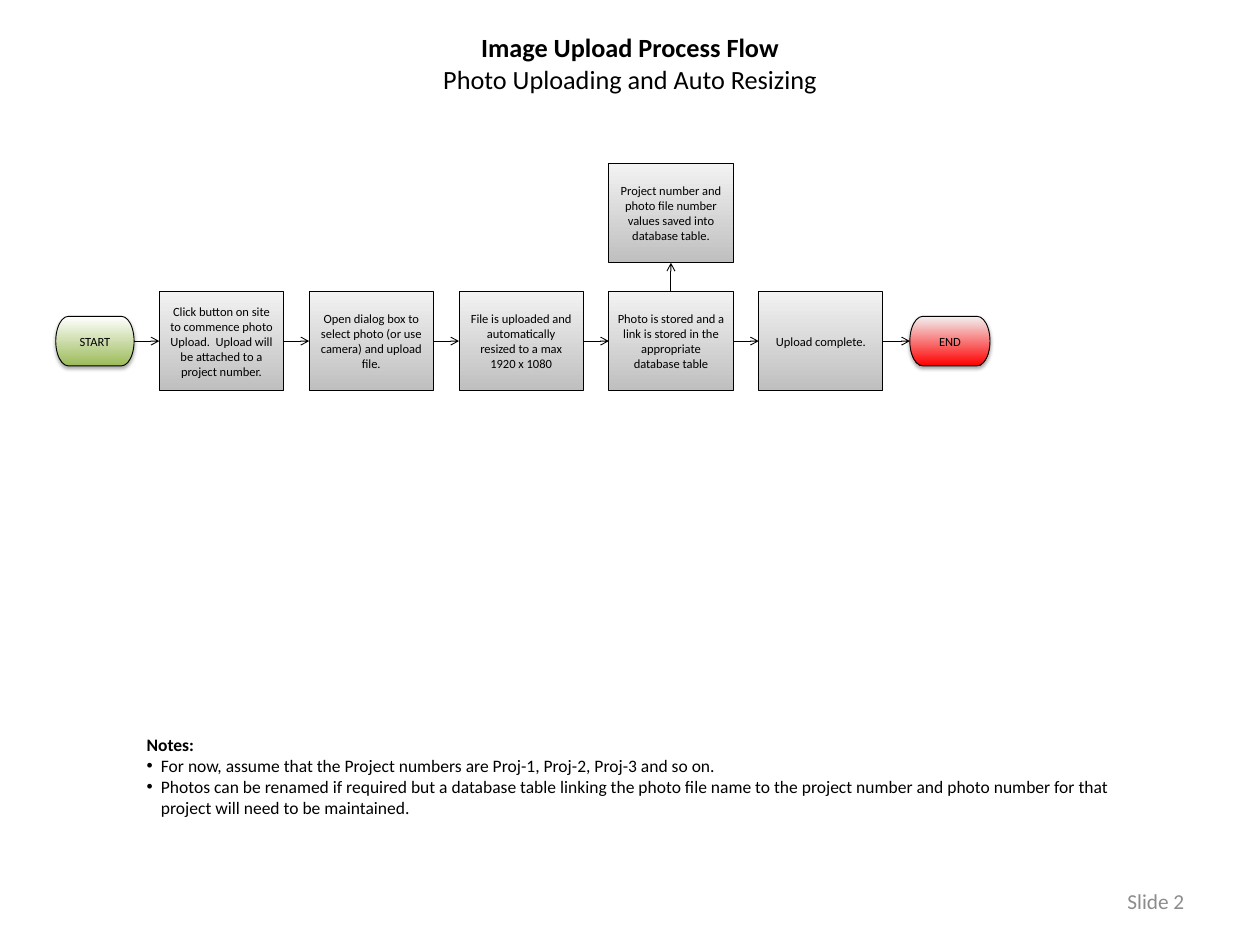
import lxml.etree
import pptx
import pptx.dml.color
import pptx.enum.shapes
import pptx.enum.text
import pptx.oxml
import pptx.oxml.ns
import pptx.util

Inches = pptx.util.Inches
Pt = pptx.util.Pt
RGBColor = pptx.dml.color.RGBColor
Align = pptx.enum.text.PP_ALIGN
Anchor = pptx.enum.text.MSO_ANCHOR
Shape = pptx.enum.shapes.MSO_SHAPE
qn = pptx.oxml.ns.qn

BLACK = RGBColor(0x00, 0x00, 0x00)
WHITE = RGBColor(0xFF, 0xFF, 0xFF)
PALE_GRAY = RGBColor(0xF2, 0xF2, 0xF2)
MID_GRAY = RGBColor(0xBF, 0xBF, 0xBF)
NUMBER_GRAY = RGBColor(0x8C, 0x8C, 0x8C)
GREEN = RGBColor(0x9B, 0xBB, 0x59)
RED = RGBColor(0xFF, 0x00, 0x00)
FONT = "Calibri"

TOP, LEFT, BOTTOM, RIGHT = range(4)

STEPS = [
    "Click button on site to commence photo Upload.  Upload will be attached to a project number.",
    "Open dialog box to select photo (or use camera) and upload file.",
    "File is uploaded and automatically resized to a max 1920 x 1080",
    "Photo is stored and a link is stored in the appropriate database table",
    "Upload complete.",
]
STORAGE_STEP = 3
STORAGE = "Project number and photo file number values saved into database table."
NOTES = [
    "For now, assume that the Project numbers are Proj-1, Proj-2, Proj-3 and so on.",
    "Photos can be renamed if required but a database table linking the photo file name "
    "to the project number and photo number for that project will need to be maintained.",
]
SHADOW = (
    '<a:outerShdw xmlns:a="http://schemas.openxmlformats.org/drawingml/2006/main" '
    'blurRad="40000" dist="23000" dir="5400000" rotWithShape="0">'
    '<a:srgbClr val="000000"><a:alpha val="35000"/></a:srgbClr></a:outerShdw>'
)


def write(paragraph, wording, size, align, bold=False, color=BLACK):
    """Add one formatted run to a paragraph."""
    paragraph.alignment = align
    run = paragraph.add_run()
    run.text = wording
    run.font.name = FONT
    run.font.size = Pt(size)
    run.font.bold = bold
    run.font.color.rgb = color


def set_frame(frame, anchor, inset_x=0.1, inset_y=0.05):
    """Wrap a text frame and set its anchor and insets."""
    frame.word_wrap = True
    frame.auto_size = pptx.enum.text.MSO_AUTO_SIZE.NONE
    frame.vertical_anchor = anchor
    frame.margin_left = frame.margin_right = Inches(inset_x)
    frame.margin_top = frame.margin_bottom = Inches(inset_y)


def add_node(slide, kind, box, wording, upper, lower):
    """Draw a flowchart node shaded from its upper to its lower colour."""
    node = slide.shapes.add_shape(kind, *box)
    node.shadow.inherit = False
    node.fill.gradient()
    node.fill.gradient_angle = 270
    for stop, color in zip(node.fill.gradient_stops, (upper, lower)):
        stop.color.rgb = color
    node.line.color.rgb = BLACK
    node.line.width = Pt(0.75)
    set_frame(node.text_frame, Anchor.MIDDLE)
    write(node.text_frame.paragraphs[0], wording, 10, Align.CENTER)
    return node


def add_terminator(slide, box, wording, upper, lower):
    """Draw a start or end node with a soft shadow."""
    terminator = add_node(slide, Shape.FLOWCHART_TERMINATOR, box, wording, upper, lower)
    effects = terminator._element.spPr.find(qn("a:effectLst"))
    effects.append(pptx.oxml.parse_xml(SHADOW))
    return terminator


def add_arrow(slide, source, source_side, target, target_side):
    """Join two nodes with an open-headed arrow."""
    arrow = slide.shapes.add_connector(pptx.enum.shapes.MSO_CONNECTOR.STRAIGHT, 0, 0, 0, 0)
    arrow.begin_connect(source, source_side)
    arrow.end_connect(target, target_side)
    arrow.line.color.rgb = BLACK
    arrow.line.width = Pt(0.75)
    lxml.etree.SubElement(arrow.line._get_or_add_ln(), qn("a:tailEnd"), type="arrow")
    lxml.etree.SubElement(arrow._element.spPr, qn("a:effectLst"))


def add_title(slide, left, top, width, height):
    """Place the two-line title."""
    title = slide.shapes.title
    title.left, title.top, title.width, title.height = left, top, width, height
    frame = title.text_frame
    set_frame(frame, Anchor.TOP)
    write(frame.paragraphs[0], "Image Upload Process Flow", 21, Align.CENTER, bold=True)
    write(frame.add_paragraph(), "Photo Uploading and Auto Resizing", 21, Align.CENTER)


def add_flow(slide, left, top, width, height):
    """Place the row of steps, its two ends and the storage branch."""
    step_width, step_height = Inches(1.38), Inches(1.1)
    start_width, end_width, end_height = Inches(0.87), Inches(0.89), Inches(0.55)
    first_left = left + Inches(1.15)
    pitch = Inches(6.66) / (len(STEPS) - 1)
    row_top = top + height - step_height
    end_top = row_top + (step_height - end_height) // 2

    start = add_terminator(
        slide, (left, end_top, start_width, end_height), "START", WHITE, GREEN)
    steps = [
        add_node(slide, Shape.FLOWCHART_PROCESS,
                 (int(first_left + index * pitch), row_top, step_width, step_height),
                 wording, PALE_GRAY, MID_GRAY)
        for index, wording in enumerate(STEPS)
    ]
    end = add_terminator(
        slide, (left + width - end_width, end_top, end_width, end_height),
        "END", PALE_GRAY, RED)
    row = [start, *steps, end]
    for source, target in zip(row, row[1:]):
        add_arrow(slide, source, RIGHT, target, LEFT)

    storing = steps[STORAGE_STEP]
    storage = add_node(slide, Shape.FLOWCHART_PROCESS,
                       (storing.left, top, step_width, step_height),
                       STORAGE, PALE_GRAY, MID_GRAY)
    add_arrow(slide, storing, TOP, storage, BOTTOM)


def add_notes(slide, left, top, width, height):
    """Place the heading and bulleted notes."""
    frame = slide.shapes.add_textbox(left, top, width, height).text_frame
    set_frame(frame, Anchor.TOP)
    write(frame.paragraphs[0], "Notes:", 14, Align.LEFT, bold=True)
    for note in NOTES:
        paragraph = frame.add_paragraph()
        write(paragraph, note, 14, Align.LEFT)
        properties = paragraph._p.get_or_add_pPr()
        properties.set("marL", str(Inches(0.16)))
        properties.set("indent", str(-Inches(0.16)))
        lxml.etree.SubElement(properties, qn("a:buFont"), typeface="Arial")
        lxml.etree.SubElement(properties, qn("a:buChar"), char="•")


def add_slide_number(slide, left, top, width, height):
    """Place the slide number label."""
    frame = slide.shapes.add_textbox(left, top, width, height).text_frame
    set_frame(frame, Anchor.MIDDLE, 0.14, 0.07)
    write(frame.paragraphs[0], "Slide 2", 17, Align.RIGHT, color=NUMBER_GRAY)


def main():
    """Build and save the process flow slide."""
    deck = pptx.Presentation()
    deck.slide_width, deck.slide_height = Inches(14), Inches(10.5)
    slide = deck.slides.add_slide(deck.slide_layouts[5])
    add_title(slide, 0, Inches(0.3), deck.slide_width, Inches(0.81))
    add_flow(slide, Inches(0.62), Inches(1.82), Inches(10.38), Inches(2.52))
    add_notes(slide, Inches(1.53), Inches(8.11), Inches(10.95), Inches(1.04))
    add_slide_number(slide, Inches(10.03), Inches(9.73), Inches(3.27), Inches(0.56))
    deck.save("out.pptx")


if __name__ == "__main__":
    main()
